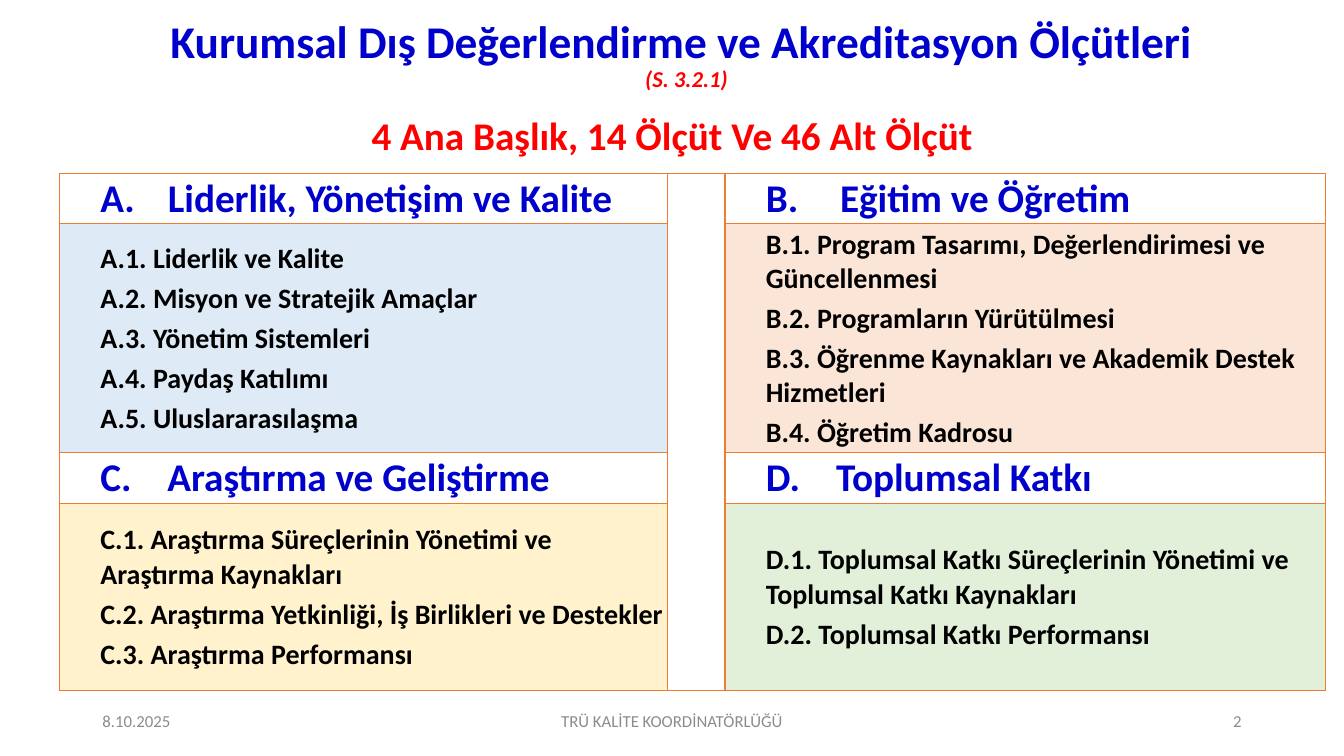
from pptx import Presentation
from pptx.dml.color import RGBColor
from pptx.enum.text import MSO_ANCHOR as Anchor, PP_ALIGN as Align
from pptx.oxml.xmlchemy import OxmlElement
from pptx.util import Cm, Pt

BLUE = RGBColor(0x00, 0x00, 0xCC)
RED = RGBColor(0xFF, 0x00, 0x00)
BLACK = RGBColor(0x00, 0x00, 0x00)
WHITE = RGBColor(0xFF, 0xFF, 0xFF)
GRAY = RGBColor(0x8C, 0x8C, 0x8C)
ORANGE = RGBColor(0xED, 0x7D, 0x31)
PALE_BLUE = RGBColor(0xDE, 0xEB, 0xF7)
PALE_ORANGE = RGBColor(0xFB, 0xE5, 0xD6)
PALE_YELLOW = RGBColor(0xFF, 0xF2, 0xCC)
PALE_GREEN = RGBColor(0xE2, 0xF0, 0xD9)

TITLE = "Kurumsal Dış Değerlendirme ve Akreditasyon Ölçütleri "
REFERENCE = "(S. 3.2.1)"
SUBTITLE = "4 Ana Başlık, 14 Ölçüt Ve 46 Alt Ölçüt"
FOOTERS = [
    ("8.10.2025", 2.33, 7.62, Align.LEFT),
    ("TRÜ KALİTE KOORDİNATÖRLÜĞÜ", 11.22, 11.43, Align.CENTER),
    ("2", 23.92, 7.62, Align.RIGHT),
]
SECTIONS = [
    (0, 0, "A.", "Liderlik, Yönetişim ve Kalite", 2.7, PALE_BLUE, [
        "A.1. Liderlik ve Kalite",
        "A.2. Misyon ve Stratejik Amaçlar",
        "A.3. Yönetim Sistemleri",
        "A.4. Paydaş Katılımı",
        "A.5. Uluslararasılaşma",
    ]),
    (0, 2, "B.", "Eğitim ve Öğretim", 2.87, PALE_ORANGE, [
        "B.1. Program Tasarımı, Değerlendirimesi ve Güncellenmesi",
        "B.2. Programların Yürütülmesi",
        "B.3. Öğrenme Kaynakları ve Akademik Destek Hizmetleri",
        "B.4. Öğretim Kadrosu",
    ]),
    (2, 0, "C.", "Araştırma ve Geliştirme", 2.69, PALE_YELLOW, [
        "C.1. Araştırma Süreçlerinin Yönetimi ve Araştırma Kaynakları",
        "C.2. Araştırma Yetkinliği, İş Birlikleri ve Destekler",
        "C.3. Araştırma Performansı",
    ]),
    (2, 2, "D.", "Toplumsal Katkı", 2.77, PALE_GREEN, [
        "D.1. Toplumsal Katkı Süreçlerinin Yönetimi ve Toplumsal Katkı Kaynakları",
        "D.2. Toplumsal Katkı Performansı",
    ]),
]
COLUMN_WIDTHS = [15.32, 1.45, 15.14]
ROW_HEIGHTS = [1.27, 5.77, 1.27, 4.72]
TEXT_INDENT = 1.0


def write(paragraph, text, *, size, color, bold=True, italic=False):
    run = paragraph.add_run()
    run.text = text
    font = run.font
    font.name = "Calibri"
    font.size = Pt(size)
    font.bold = bold
    font.italic = italic
    font.color.rgb = color


def add_box(slide, left, top, width, height, align, anchor=Anchor.MIDDLE):
    frame = slide.shapes.add_textbox(Cm(left), Cm(top), Cm(width), Cm(height)).text_frame
    frame.word_wrap = True
    frame.vertical_anchor = anchor
    paragraph = frame.paragraphs[0]
    paragraph.alignment = align
    return paragraph


def style_cell(cell):
    cell.margin_left = cell.margin_right = cell.margin_top = Cm(0.03)
    cell.margin_bottom = 0
    cell.vertical_anchor = Anchor.MIDDLE
    properties = cell._tc.get_or_add_tcPr()
    for side in ("a:lnL", "a:lnR", "a:lnT", "a:lnB"):
        line = OxmlElement(side)
        line.set("w", str(Pt(1)))
        solid = OxmlElement("a:solidFill")
        color = OxmlElement("a:srgbClr")
        color.set("val", str(ORANGE))
        solid.append(color)
        line.append(solid)
        properties.append(line)
    cell.fill.solid()
    cell.fill.fore_color.rgb = WHITE


def indent(paragraph, margin, first_line=0):
    properties = paragraph._p.get_or_add_pPr()
    properties.set("marL", str(Cm(margin)))
    properties.set("indent", str(Cm(first_line)))
    paragraph.space_after = Pt(4)


def fill_section(table, row, column, letter, heading, heading_left, color, items):
    paragraph = table.cell(row, column).text_frame.paragraphs[0]
    indent(paragraph, heading_left, TEXT_INDENT - heading_left)
    write(paragraph, f"{letter}\t{heading}", size=28, color=BLUE)

    cell = table.cell(row + 1, column)
    cell.fill.fore_color.rgb = color
    frame = cell.text_frame
    for index, item in enumerate(items):
        paragraph = frame.add_paragraph() if index else frame.paragraphs[0]
        indent(paragraph, TEXT_INDENT)
        write(paragraph, item, size=20, color=BLACK)


def add_criteria_table(slide):
    table = slide.shapes.add_table(
        len(ROW_HEIGHTS), len(COLUMN_WIDTHS), Cm(1.5), Cm(4.37),
        Cm(sum(COLUMN_WIDTHS)), Cm(sum(ROW_HEIGHTS))).table
    table.first_row = False
    table.horz_banding = False
    for column, width in zip(table.columns, COLUMN_WIDTHS):
        column.width = Cm(width)
    for row, height in zip(table.rows, ROW_HEIGHTS):
        row.height = Cm(height)
    for cell in table.iter_cells():
        style_cell(cell)
    table.cell(0, 1).merge(table.cell(len(ROW_HEIGHTS) - 1, 1))
    for section in SECTIONS:
        fill_section(table, *section)


def main():
    presentation = Presentation()
    presentation.slide_width = Cm(33.87)
    presentation.slide_height = Cm(19.05)
    slide = presentation.slides.add_slide(presentation.slide_layouts[6])

    title = add_box(slide, 0.74, 0.46, 33.12, 1.9, Align.CENTER)
    title.line_spacing = 0.9
    write(title, TITLE, size=32.4, color=BLUE)
    title.add_line_break()
    write(title, REFERENCE, size=16.2, color=RED, italic=True)

    for text, left, width, align in FOOTERS:
        footer = add_box(slide, left, 17.65, width, 1.02, align)
        write(footer, text, size=12, color=GRAY, bold=False)

    add_criteria_table(slide)

    subtitle = add_box(slide, 0, 2.67, 33.87, 1.45, Align.CENTER, Anchor.TOP)
    write(subtitle, SUBTITLE, size=28, color=RED)

    presentation.save("out.pptx")


if __name__ == "__main__":
    main()
